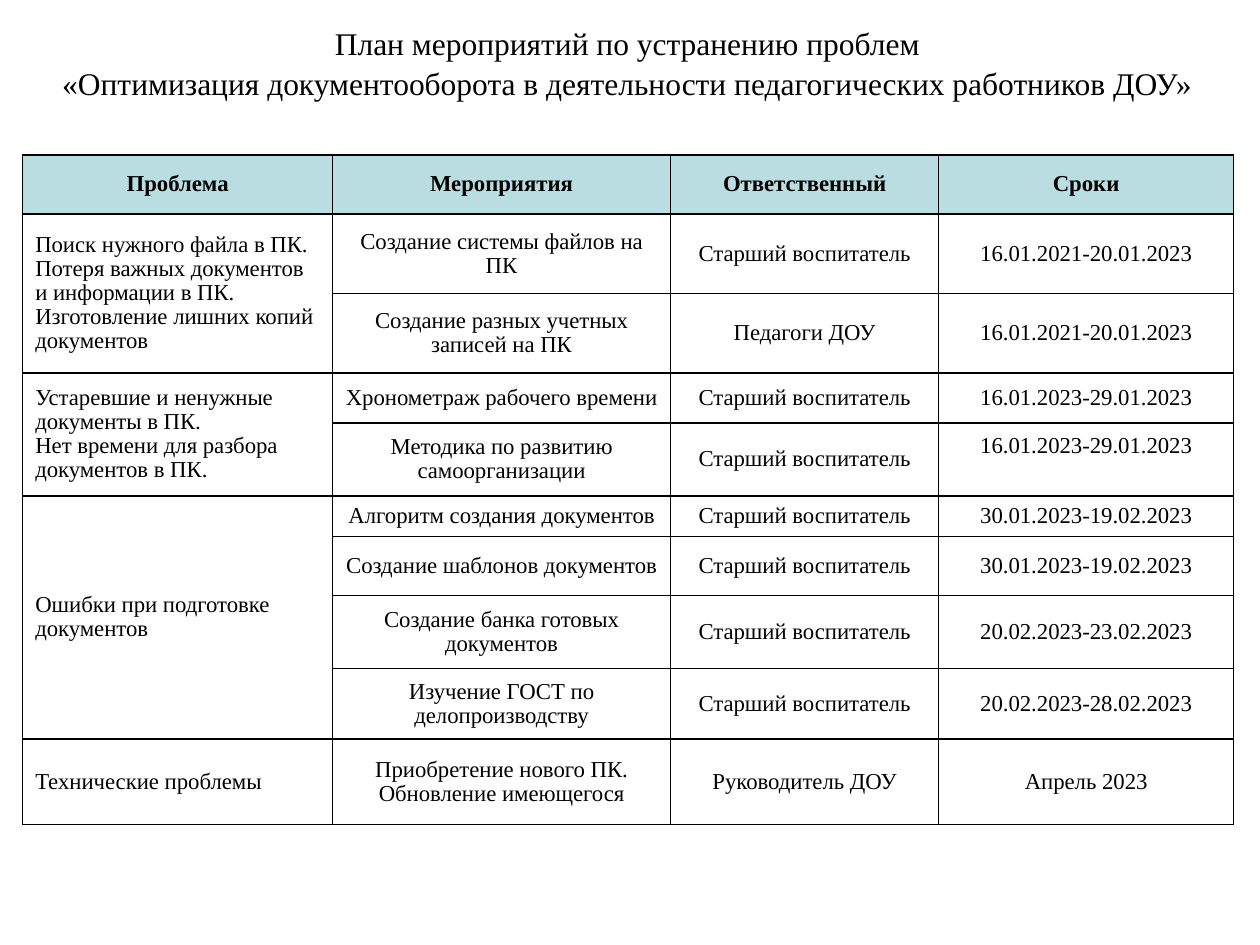
import pptx
import pptx.util
import pptx.dml.color
import pptx.enum.text
import pptx.oxml
import pptx.oxml.ns

Pt = pptx.util.Pt
RGBColor = pptx.dml.color.RGBColor
ALIGN = pptx.enum.text.PP_ALIGN
ANCHOR = pptx.enum.text.MSO_ANCHOR

FONT = "Times New Roman"
BLACK = RGBColor(0x00, 0x00, 0x00)
WHITE = RGBColor(0xFF, 0xFF, 0xFF)
HEADER_FILL = RGBColor(0xBA, 0xDD, 0xE1)

# Boxes as shares of the slide: left, top, width, height
TITLE_BOX = (0.035, 0.017, 0.926, 0.175)
PLAN_BOX = (0.018, 0.164, 0.961, 0.709)

# Relative column widths and row heights of the plan
COL_SHARES = (2.46, 2.68, 2.13, 2.34)
ROW_SHARES = (0.47, 0.63, 0.63, 0.4, 0.58, 0.32, 0.47, 0.58, 0.56, 0.68)

TITLE = ("План мероприятий по устранению проблем\n"
         "«Оптимизация документооборота в деятельности педагогических работников ДОУ»")
HEADER = ("Проблема", "Мероприятия", "Ответственный", "Сроки")
TEACHER = "Старший воспитатель"
PLAN = (
    ("Поиск нужного файла в ПК. Потеря важных документов и информации в ПК.\n"
     "Изготовление лишних копий документов", (
         ("Создание системы файлов на ПК", TEACHER, "16.01.2021-20.01.2023"),
         ("Создание разных учетных записей на ПК", "Педагоги ДОУ", "16.01.2021-20.01.2023"))),
    ("Устаревшие и ненужные документы в ПК.\nНет времени для разбора документов в ПК.", (
        ("Хронометраж рабочего времени", TEACHER, "16.01.2023-29.01.2023"),
        ("Методика по развитию самоорганизации", TEACHER, "16.01.2023-29.01.2023"))),
    ("Ошибки при подготовке документов", (
        ("Алгоритм создания документов", TEACHER, "30.01.2023-19.02.2023"),
        ("Создание шаблонов документов", TEACHER, "30.01.2023-19.02.2023"),
        ("Создание банка готовых документов", TEACHER, "20.02.2023-23.02.2023"),
        ("Изучение ГОСТ по делопроизводству", TEACHER, "20.02.2023-28.02.2023"))),
    ("Технические проблемы", (
        ("Приобретение нового ПК.\nОбновление имеющегося", "Руководитель ДОУ", "Апрель 2023"),)),
)
TOP_DATE = (4, 3)  # the one date set at the top of its cell


def write(tf, text, size=13, bold=False, align=ALIGN.CENTER, spacing=0.96):
    tf.word_wrap = True
    for i, line in enumerate(text.split("\n")):
        p = tf.paragraphs[0] if i == 0 else tf.add_paragraph()
        p.alignment = align
        p.line_spacing = spacing
        r = p.add_run()
        r.text = line
        r.font.name = FONT
        r.font.size = Pt(size)
        r.font.bold = bold
        r.font.color.rgb = BLACK


def set_borders(cell, width=Pt(1)):
    tc_pr = cell._tc.get_or_add_tcPr()
    for i, side in enumerate(("lnL", "lnR", "lnT", "lnB")):
        tc_pr.insert(i, pptx.oxml.parse_xml(
            f'<a:{side} {pptx.oxml.ns.nsdecls("a")} w="{width}"><a:solidFill>'
            f'<a:srgbClr val="{BLACK}"/></a:solidFill></a:{side}>'))


def add_title(slide, box):
    tf = slide.shapes.add_textbox(*box).text_frame
    write(tf, TITLE, size=18, spacing=1.05)


def add_plan(slide, box):
    table = slide.shapes.add_table(len(ROW_SHARES), len(COL_SHARES), *box).table
    for col, share in zip(table.columns, COL_SHARES):
        col.width = int(box[2] * share / sum(COL_SHARES))
    for row, share in zip(table.rows, ROW_SHARES):
        row.height = int(box[3] * share / sum(ROW_SHARES))

    for cell in table.iter_cells():
        cell.fill.solid()
        cell.fill.fore_color.rgb = WHITE
        cell.vertical_anchor = ANCHOR.MIDDLE
        set_borders(cell)

    for c, text in enumerate(HEADER):
        cell = table.cell(0, c)
        cell.fill.fore_color.rgb = HEADER_FILL
        write(cell.text_frame, text, bold=True)

    top = 1
    for problem, actions in PLAN:
        first = table.cell(top, 0)
        if len(actions) > 1:
            first.merge(table.cell(top + len(actions) - 1, 0))
        write(first.text_frame, problem, align=ALIGN.LEFT)
        for r, action in enumerate(actions, top):
            for c, text in enumerate(action, 1):
                write(table.cell(r, c).text_frame, text)
        top += len(actions)

    date = table.cell(*TOP_DATE)
    date.vertical_anchor = ANCHOR.TOP
    date.margin_top = Pt(6.5)


def main():
    prs = pptx.Presentation()
    prs.slide_width = pptx.util.Inches(10)
    prs.slide_height = pptx.util.Inches(7.5)
    slide = prs.slides.add_slide(prs.slide_layouts[6])

    def place(shares):
        size = (prs.slide_width, prs.slide_height) * 2
        return [int(share * length) for share, length in zip(shares, size)]

    add_title(slide, place(TITLE_BOX))
    add_plan(slide, place(PLAN_BOX))
    prs.save("out.pptx")


if __name__ == "__main__":
    main()
